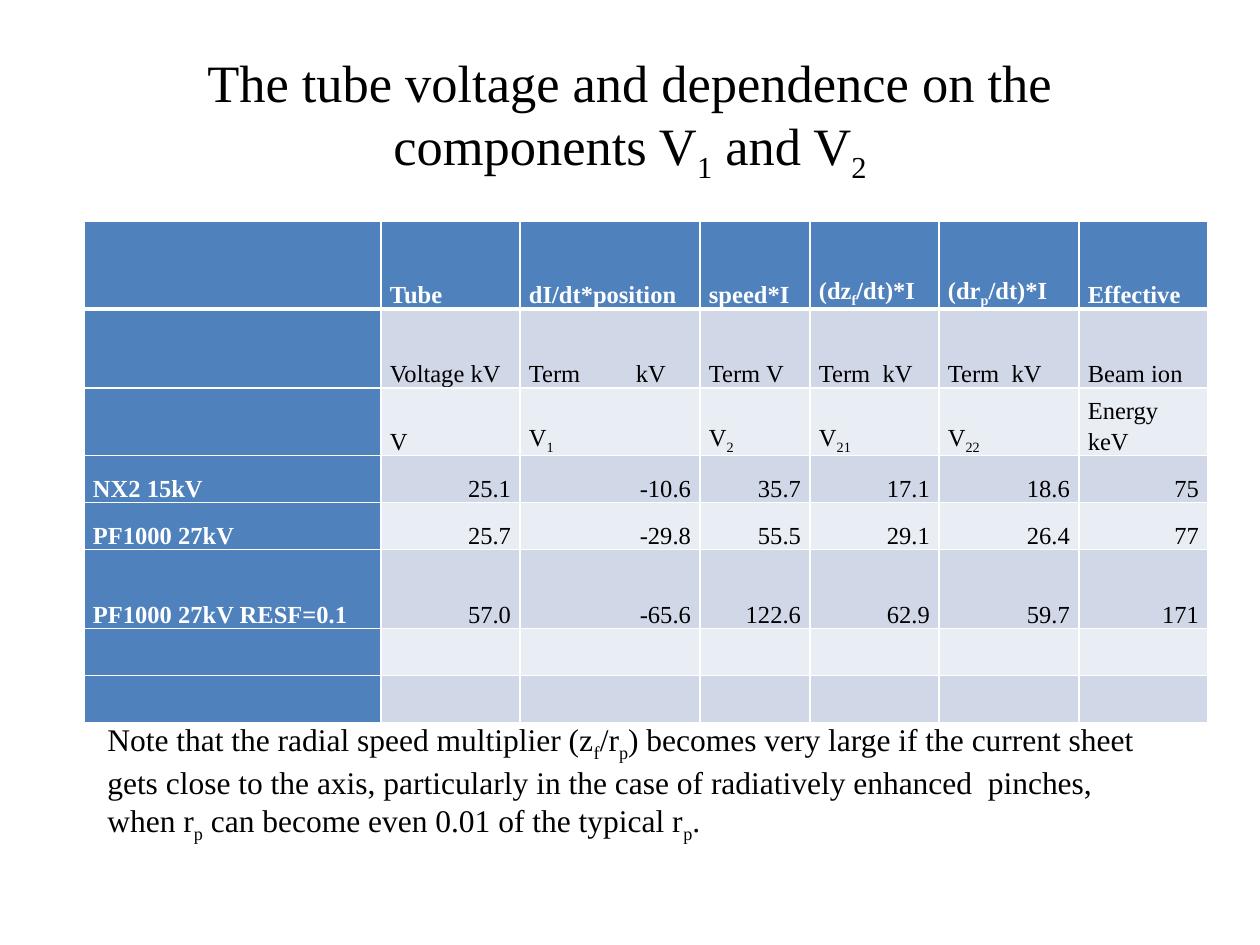
from lxml import etree
from pptx import Presentation
from pptx.dml.color import RGBColor
from pptx.enum.text import MSO_ANCHOR as Anchor, PP_ALIGN as Align
from pptx.oxml.ns import qn
from pptx.util import Pt

PX = 914400 // 126
BLACK = RGBColor(0x00, 0x00, 0x00)
WHITE = RGBColor(0xFF, 0xFF, 0xFF)
BLUE = RGBColor(0x4F, 0x81, 0xBD)
BANDS = [RGBColor(0xE9, 0xED, 0xF4), RGBColor(0xD0, 0xD8, 0xE8)]


def write(paragraph, marked, size, color=BLACK, bold=False):
    for i, part in enumerate(marked.split("|")):
        if not part:
            continue
        run = paragraph.add_run()
        run.text = part
        run.font.name = "Times New Roman"
        run.font.size = Pt(size)
        run.font.bold = bold
        run.font.color.rgb = color
        if i % 2:
            run.font._element.set("baseline", "-25000")


def add_border(cell, side, width):
    line = etree.SubElement(cell._tc.get_or_add_tcPr(), qn(f"a:ln{side}"), w=str(Pt(width)))
    fill = etree.SubElement(line, qn("a:solidFill"))
    etree.SubElement(fill, qn("a:srgbClr"), val=str(WHITE))


deck = Presentation()
deck.slide_width = 1260 * PX
deck.slide_height = 945 * PX
slide = deck.slides.add_slide(deck.slide_layouts[6])

title = slide.shapes.add_textbox(63 * PX, 38 * PX, 1134 * PX, 158 * PX).text_frame
title.word_wrap = True
title.vertical_anchor = Anchor.MIDDLE
title.paragraphs[0].alignment = Align.CENTER
write(title.paragraphs[0], "The tube voltage and dependence on the components V|1| and V|2", 30)

voltages = [
    ["", "Tube", "dI/dt*position", "speed*I", "(dz|f|/dt)*I", "(dr|p|/dt)*I", "Effective"],
    ["", "Voltage kV", "Term\tkV", "Term V", "Term  kV", "Term  kV", "Beam ion"],
    ["", "V", "V|1", "V|2", "V|21", "V|22", "Energy keV"],
    ["NX2 15kV", "25.1", "-10.6", "35.7", "17.1", "18.6", "75"],
    ["PF1000 27kV", "25.7", "-29.8", "55.5", "29.1", "26.4", "77"],
    ["PF1000 27kV RESF=0.1", "57.0", "-65.6", "122.6", "62.9", "59.7", "171"],
    [""] * 7,
    [""] * 7,
]
column_widths = [297, 139, 180, 110, 129, 140, 129]
row_heights = [88, 79, 43, 47, 47, 79, 47, 47]
HEADING_ROWS = 3

table = slide.shapes.add_table(
    len(voltages), len(column_widths), 84 * PX, 221 * PX,
    sum(column_widths) * PX, sum(row_heights) * PX).table
for column, width in zip(table.columns, column_widths):
    column.width = width * PX
for row, height in zip(table.rows, row_heights):
    row.height = height * PX

for r, entries in enumerate(voltages):
    for c, entry in enumerate(entries):
        cell = table.cell(r, c)
        heading = r == 0 or c == 0
        for side in "LRTB":
            heavy = (r, side) in [(0, "B"), (1, "T")]
            add_border(cell, side, 3 if heavy else 1)
        cell.fill.solid()
        cell.fill.fore_color.rgb = BLUE if heading else BANDS[r % 2]
        cell.vertical_anchor = Anchor.BOTTOM
        cell.margin_left = cell.margin_right = 9 * PX
        cell.margin_top = cell.margin_bottom = 0
        paragraph = cell.text_frame.paragraphs[0]
        paragraph.line_spacing = 1.15
        if c > 0 and r >= HEADING_ROWS:
            paragraph.alignment = Align.RIGHT
        if "\t" in entry:
            tabs = etree.SubElement(paragraph._p.get_or_add_pPr(), qn("a:tabLst"))
            etree.SubElement(tabs, qn("a:tab"), pos=str(107 * PX), algn="l")
        write(paragraph, entry, 14, WHITE if heading else BLACK, heading)

note = slide.shapes.add_textbox(95 * PX, 714 * PX, 1071 * PX, 127 * PX).text_frame
note.word_wrap = True
write(
    note.paragraphs[0],
    "Note that the radial speed multiplier (z|f|/r|p|) becomes very large if the current sheet "
    "gets close to the axis, particularly in the case of radiatively enhanced  pinches, "
    "when r|p| can become even 0.01 of the typical r|p|.",
    18)

deck.save("out.pptx")
